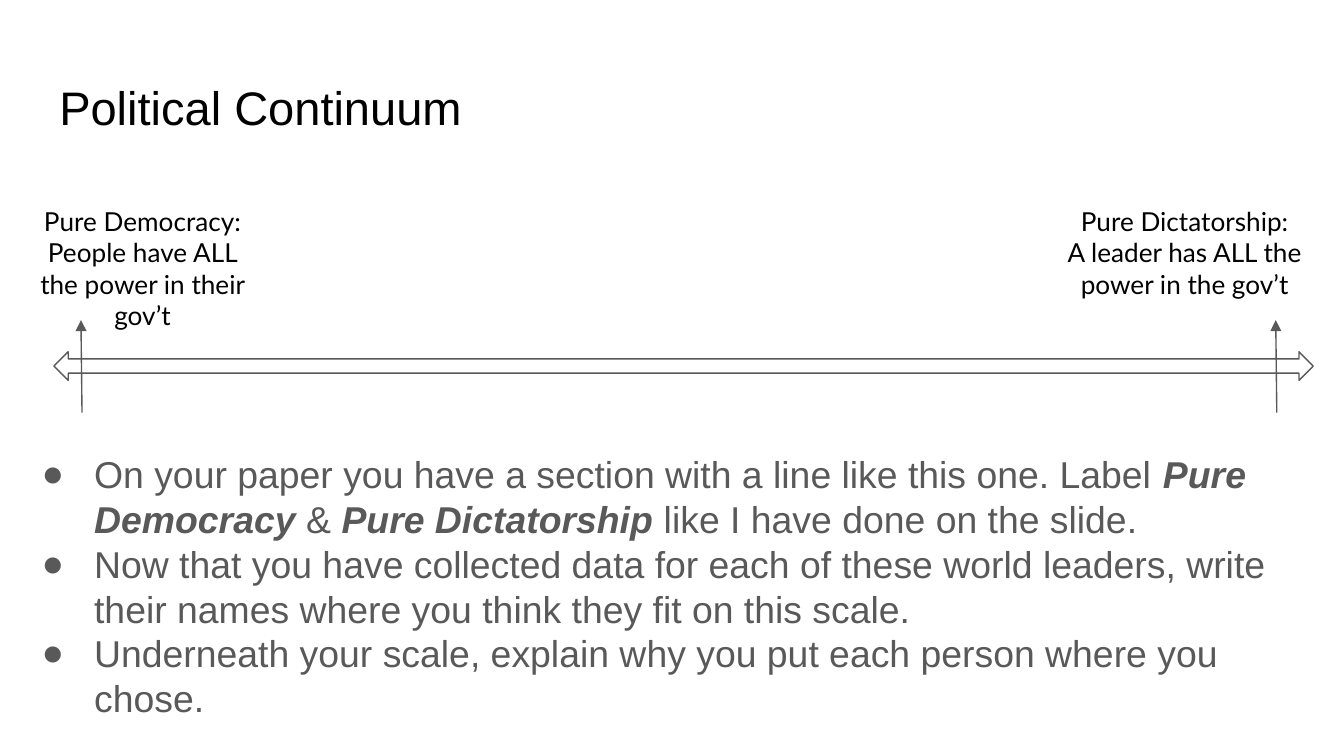
from lxml.etree import SubElement
from pptx import Presentation
from pptx.dml.color import RGBColor
from pptx.enum.shapes import MSO_CONNECTOR, MSO_SHAPE
from pptx.enum.text import MSO_ANCHOR, MSO_AUTO_SIZE, PP_ALIGN
from pptx.oxml.ns import qn
from pptx.util import Cm, Pt


def color(value):
    return RGBColor.from_string(value)


def add_run(p, text, size=14, font="Arial", fill="000000", bold=False, italic=False):
    r = p.add_run()
    r.text = text
    r.font.size = Pt(size)
    r.font.name = font
    r.font.bold = bold
    r.font.italic = italic
    r.font.color.rgb = color(fill)


class ContinuumSlide:
    GRAY = "595959"
    WHITE = "FFFFFF"
    LINE_WIDTH = Pt(0.75)
    INSET = Cm(0.25)

    def __init__(self, prs):
        self.s = prs.slides.add_slide(prs.slide_layouts[5])
        self.s.background.fill.solid()
        self.s.background.fill.fore_color.rgb = color(self.WHITE)

    def frame(self, sp):
        tf = sp.text_frame
        tf.word_wrap = True
        tf.auto_size = MSO_AUTO_SIZE.NONE
        tf.vertical_anchor = MSO_ANCHOR.TOP
        tf.margin_left = tf.margin_right = self.INSET
        tf.margin_top = tf.margin_bottom = self.INSET
        return tf

    def text_box(self, x, y, w, h):
        return self.frame(self.s.shapes.add_textbox(Cm(x), Cm(y), Cm(w), Cm(h)))

    def paragraphs(self, tf, count):
        return [tf.paragraphs[0]] + [tf.add_paragraph() for _ in range(count - 1)]

    def title(self, text, x, y, w, h):
        sp = self.s.shapes.title
        sp.left, sp.top, sp.width, sp.height = Cm(x), Cm(y), Cm(w), Cm(h)
        p = self.frame(sp).paragraphs[0]
        p.alignment = PP_ALIGN.LEFT
        add_run(p, text, size=25.2)

    def label(self, lines, x, y, w, h):
        tf = self.text_box(x, y, w, h)
        for p, text in zip(self.paragraphs(tf, len(lines)), lines):
            p.alignment = PP_ALIGN.CENTER
            add_run(p, text, font="Lato")

    def bullets(self, items, x, y, w, h):
        tf = self.text_box(x, y, w, h)
        for p, parts in zip(self.paragraphs(tf, len(items)), items):
            p.line_spacing = 1.0
            pPr = p._p.get_or_add_pPr()
            pPr.set("marL", str(Cm(1.27)))
            pPr.set("indent", str(Cm(-0.99)))
            clr = SubElement(pPr, qn("a:buClr"))
            SubElement(clr, qn("a:srgbClr"), val=self.GRAY)
            SubElement(pPr, qn("a:buFont"), typeface="Arial")
            SubElement(pPr, qn("a:buChar"), char="●")
            for i, text in enumerate(parts):
                strong = i % 2 == 1
                add_run(p, text, size=20, fill=self.GRAY, bold=strong, italic=strong)

    def scale(self, x, y, w, h):
        sp = self.s.shapes.add_shape(
            MSO_SHAPE.LEFT_RIGHT_ARROW, Cm(x), Cm(y), Cm(w), Cm(h))
        sp.shadow.inherit = False
        sp.fill.solid()
        sp.fill.fore_color.rgb = color(self.WHITE)
        sp.line.color.rgb = color(self.GRAY)
        sp.line.width = self.LINE_WIDTH

    def pointer(self, x1, y1, x2, y2):
        sp = self.s.shapes.add_connector(
            MSO_CONNECTOR.STRAIGHT, Cm(x1), Cm(y1), Cm(x2), Cm(y2))
        sp.line.color.rgb = color(self.GRAY)
        sp.line.width = self.LINE_WIDTH
        SubElement(sp.line._get_or_add_ln(), qn("a:tailEnd"), type="triangle")
        SubElement(sp._element.spPr, qn("a:effectLst"))


def main():
    prs = Presentation()
    prs.slide_width, prs.slide_height = Cm(25.4), Cm(14.29)
    slide = ContinuumSlide(prs)
    slide.title("Political Continuum", 0.87, 1.24, 23.67, 1.6)
    slide.bullets([
        ["On your paper you have a section with a line like this one. Label ",
         "Pure Democracy", " & ", "Pure Dictatorship",
         " like I have done on the slide."],
        ["Now that you have collected data for each of these world leaders, "
         "write their names where you think they fit on this scale."],
        ["Underneath your scale, explain why you put each person where you chose."],
    ], 0.26, 8.28, 24.55, 5.36)
    slide.scale(1.02, 6.65, 23.8, 0.54)
    slide.label(["Pure Democracy:", "People have ALL the power in their gov’t"],
                0.26, 3.63, 4.87, 2.31)
    slide.label(["Pure Dictatorship:", "A leader has ALL the power in the gov’t"],
                19.69, 3.63, 5.4, 2.31)
    for x in (1.55, 24.13):
        slide.pointer(x, 7.8, x - 0.02, 6.05)
    prs.save("out.pptx")


if __name__ == "__main__":
    main()
